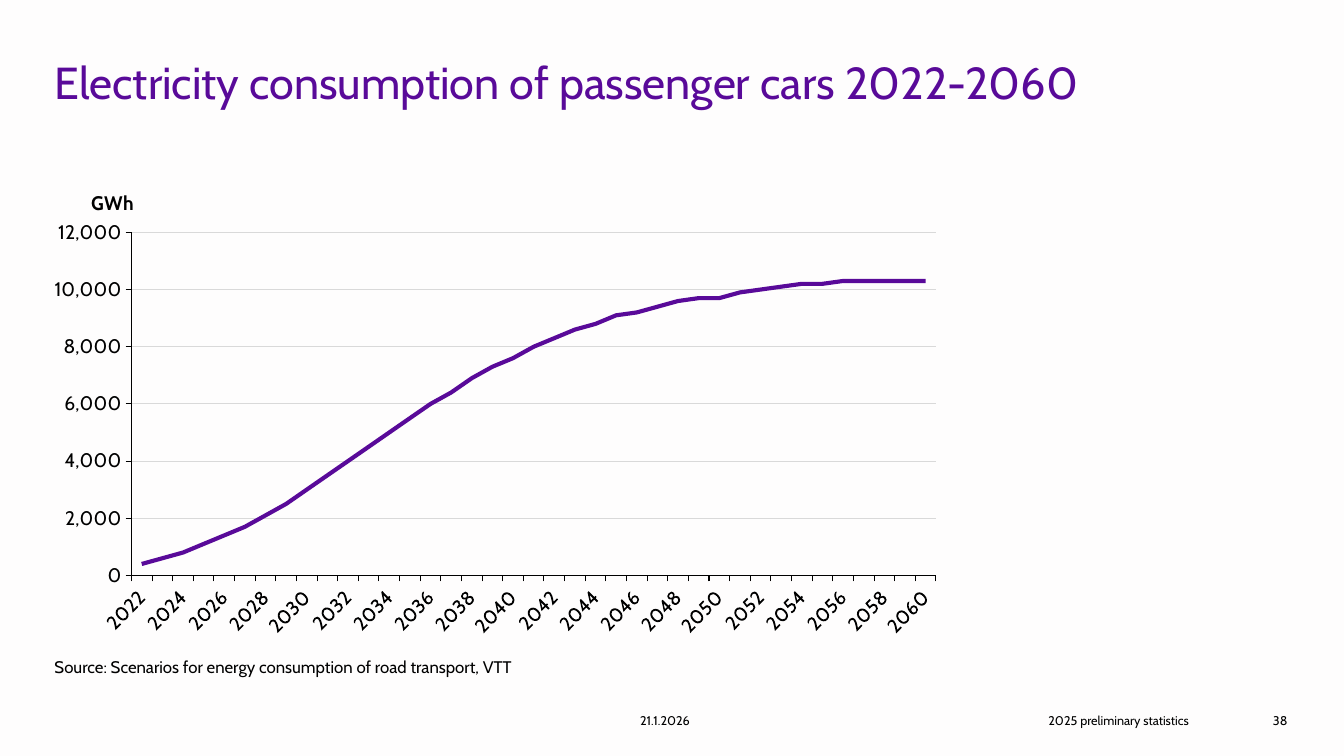
from lxml import etree
from pptx import Presentation
from pptx.chart.data import CategoryChartData
from pptx.dml.color import RGBColor
from pptx.enum import chart as ch, text as t
from pptx.oxml import ns
from pptx.util import Inches, Pt

TITLE = "Electricity consumption of passenger cars 2022-2060"
SOURCE = "Source: Scenarios for energy consumption of road transport, VTT"
UNIT = "GWh"
FIRST_YEAR = 2022
CONSUMPTION = [
    400, 600, 800, 1100, 1400, 1700, 2100, 2500, 3000, 3500,
    4000, 4500, 5000, 5500, 6000, 6400, 6900, 7300, 7600, 8000,
    8300, 8600, 8800, 9100, 9200, 9400, 9600, 9700, 9700, 9900,
    10000, 10100, 10200, 10200, 10300, 10300, 10300, 10300, 10300,
]
# text, left, width, left inset, alignment
FOOTER = [
    ("21.1.2026", 6.04, 1.11, 0, t.PP_ALIGN.CENTER),
    ("2025 preliminary statistics", 7.39, 4.4, 0.1, t.PP_ALIGN.RIGHT),
    ("38", 12.02, 0.75, 0.1, t.PP_ALIGN.RIGHT),
]
FONT = "Cabin"
PURPLE, BLACK, GRID, PAPER = "590A99", "000000", "D9D9D9", "FEFDFD"
MARGIN = 0.54


def color(hex_string):
    return RGBColor.from_string(hex_string)


def style_font(font, size, hex_string=BLACK, bold=False):
    font.name, font.size, font.bold = FONT, Pt(size), bold
    font.color.rgb = color(hex_string)


def style_line(line, hex_string, width):
    line.color.rgb, line.width = color(hex_string), Pt(width)


def write(shape, words, box, size, hex_string=BLACK, inset=(0, 0.1),
          align=t.PP_ALIGN.LEFT, anchor=t.MSO_ANCHOR.TOP, spacing=1.0):
    shape.left, shape.top, shape.width, shape.height = map(Inches, box)
    frame = shape.text_frame
    frame.word_wrap, frame.auto_size = True, t.MSO_AUTO_SIZE.NONE
    frame.vertical_anchor = anchor
    frame.margin_left, frame.margin_right = map(Inches, inset)
    frame.margin_top = frame.margin_bottom = Inches(0.05)
    line = frame.paragraphs[0]
    line.alignment, line.line_spacing, line.space_before = align, spacing, Pt(0)
    run = line.add_run()
    run.text = words
    style_font(run.font, size, hex_string)
    return line


def place(parent, after=None, **values):
    """Give a chart part a manual layout, as fractions of the chart."""
    for old in parent.findall(ns.qn("c:layout")):
        parent.remove(old)
    layout = etree.Element(ns.qn("c:layout"))
    manual = etree.SubElement(layout, ns.qn("c:manualLayout"))
    for tag, value in values.items():
        etree.SubElement(manual, ns.qn("c:" + tag)).set("val", str(value))
    if after is None:
        parent.insert(0, layout)
    else:
        after.addnext(layout)


def add_consumption_chart(slide):
    data = CategoryChartData(number_format="#,##0")
    data.categories = [str(FIRST_YEAR + i) for i in range(len(CONSUMPTION))]
    data.add_series("Series 1", CONSUMPTION)
    chart = slide.shapes.add_chart(
        ch.XL_CHART_TYPE.LINE, Inches(MARGIN), Inches(1.8),
        Inches(8.83), Inches(4.6), data).chart
    chart.has_legend = chart.has_title = False
    style_font(chart.font, 14)
    plot = chart.plots[0]
    plot.vary_by_categories = False
    curve = plot.series[0]
    curve.smooth = False
    curve.marker.style = ch.XL_MARKER_STYLE.NONE
    style_line(curve.format.line, PURPLE, 3)

    years, amounts = chart.category_axis, chart.value_axis
    for axis in (years, amounts):
        axis.major_tick_mark = ch.XL_TICK_MARK.OUTSIDE
        axis.minor_tick_mark = ch.XL_TICK_MARK.NONE
        style_line(axis.format.line, BLACK, 0.75)
        style_font(axis.tick_labels.font, 14)
    years.has_major_gridlines = False
    slant = years._element.find(ns.qn("c:txPr")).find(ns.qn("a:bodyPr"))
    slant.set("rot", "-2700000")
    slant.set("vert", "horz")
    skip = etree.Element(ns.qn("c:tickLblSkip"))
    skip.set("val", "2")
    years._element.find(ns.qn("c:noMultiLvlLbl")).addprevious(skip)

    amounts.minimum_scale, amounts.maximum_scale = 0, 12000
    amounts.major_unit = 2000
    amounts.tick_labels.number_format = "#,##0"
    amounts.tick_labels.number_format_is_linked = False
    amounts.has_major_gridlines = True
    style_line(amounts.major_gridlines.format.line, GRID, 0.75)
    unit = amounts.axis_title.text_frame
    run = unit.paragraphs[0].add_run()
    run.text = UNIT
    style_font(run.font, 14, bold=True)
    unit._txBody.bodyPr.set("rot", "0")
    unit._txBody.bodyPr.set("vert", "horz")
    heading = amounts.axis_title._element
    place(heading, heading.find(ns.qn("c:tx")),
          xMode="edge", yMode="edge", x=0.02, y=0.01)
    place(chart._chartSpace.chart.plotArea, layoutTarget="inner",
          xMode="edge", yMode="edge", x=0.07, y=0.11, w=0.92, h=0.74)


def main():
    deck = Presentation()
    deck.slide_width, deck.slide_height = Inches(13.33), Inches(7.5)
    slide = deck.slides.add_slide(deck.slide_layouts[1])
    slide.background.fill.solid()
    slide.background.fill.fore_color.rgb = color(PAPER)
    write(slide.shapes.title, TITLE, (MARGIN, 0.55, 12.23, 1.09), 32, PURPLE,
          spacing=0.9)
    source = write(slide.placeholders[1], SOURCE, (MARGIN, 6.49, 8.33, 0.23),
                   12, spacing=0.9)
    properties = source._p.get_or_add_pPr()
    properties.set("marL", "0")
    properties.set("indent", "0")
    etree.SubElement(properties, ns.qn("a:buNone"))
    for words, left, width, inset, align in FOOTER:
        box = (left, 6.95, width, 0.4)
        write(slide.shapes.add_textbox(*map(Inches, box)), words, box, 9,
              inset=(inset, 0), align=align, anchor=t.MSO_ANCHOR.MIDDLE)
    add_consumption_chart(slide)
    deck.save("out.pptx")


if __name__ == "__main__":
    main()
